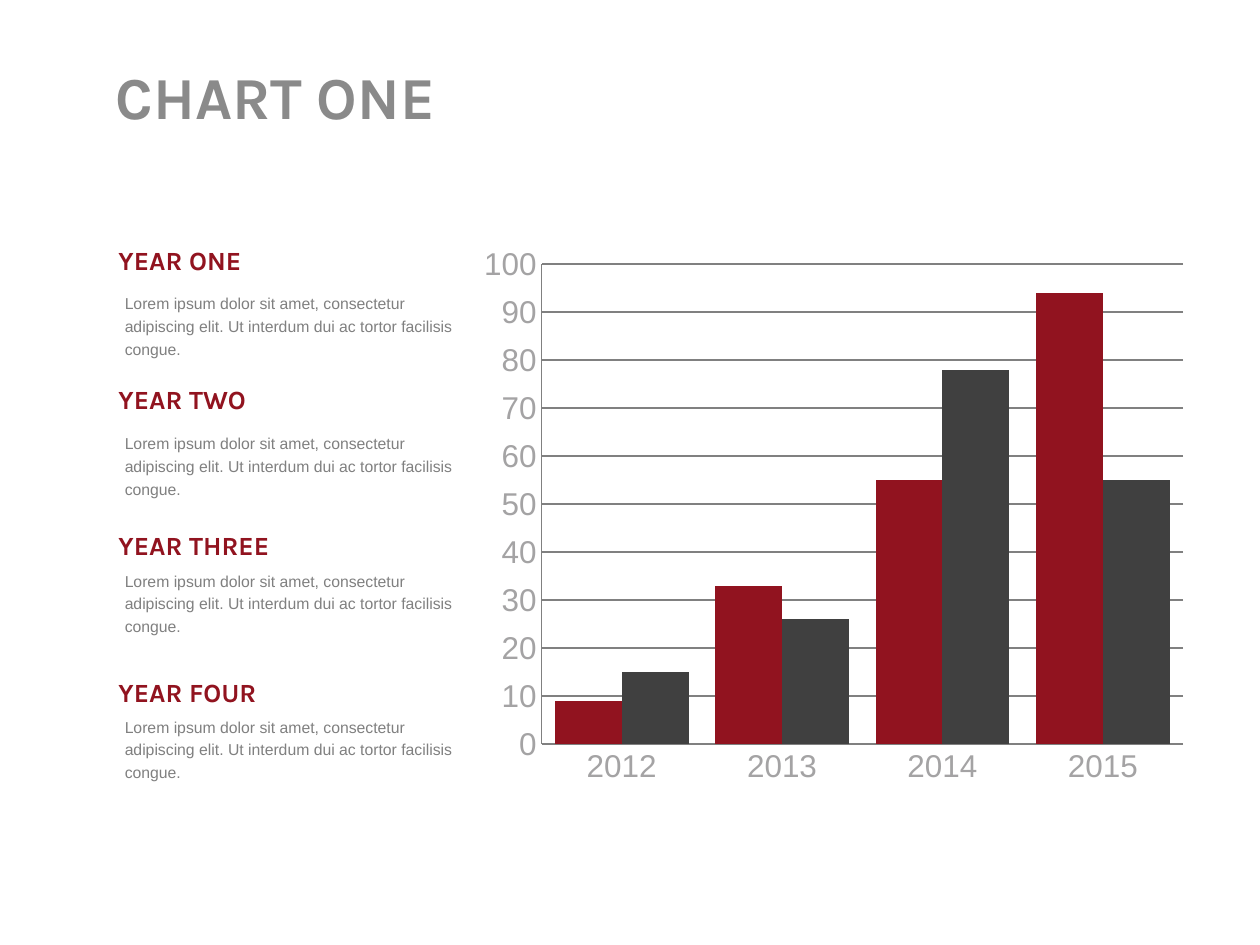
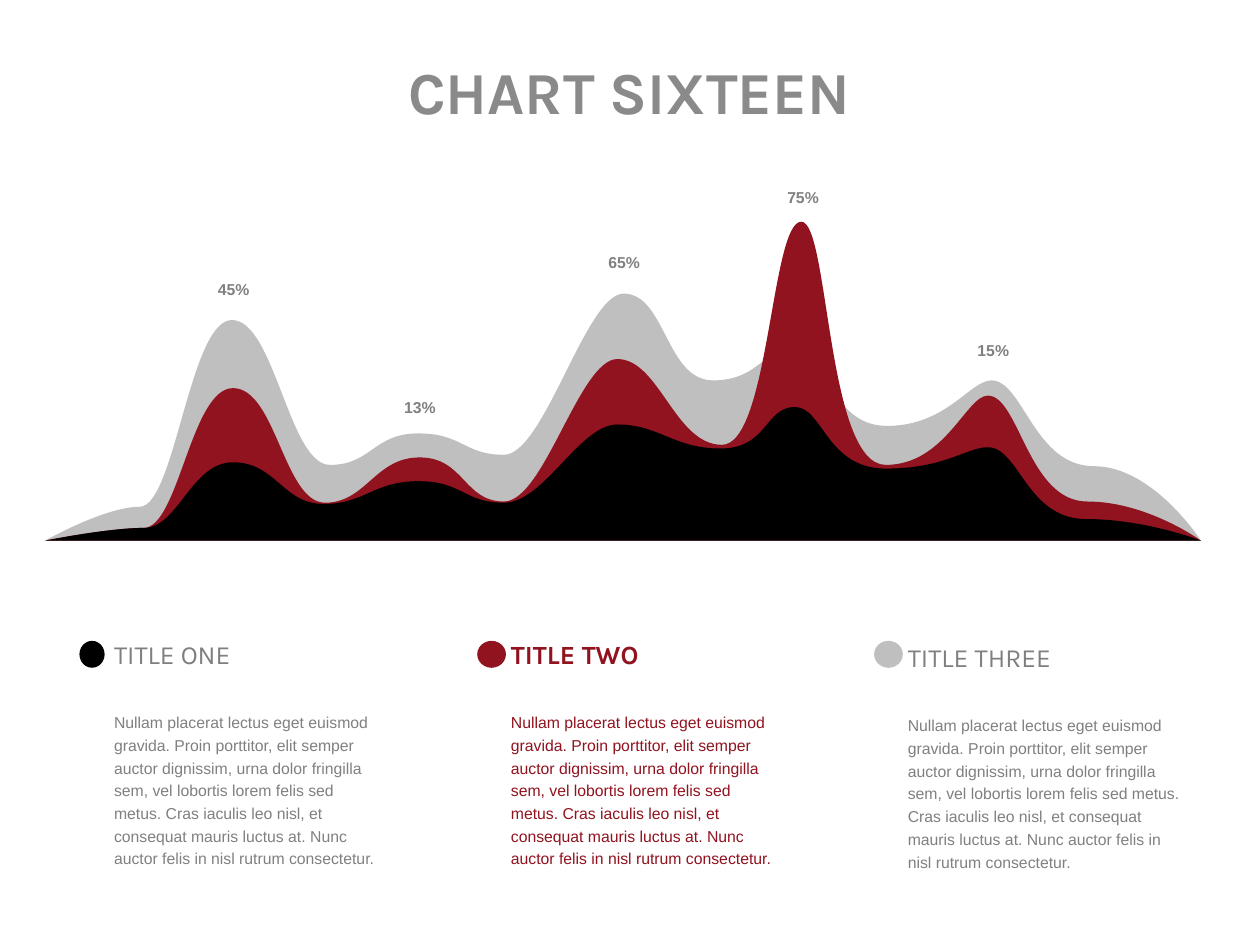
"""Build two chart slides: yearly columns and layered percentage waves."""
from dataclasses import dataclass

from lxml import etree
from pptx import Presentation
from pptx.chart.data import CategoryChartData
from pptx.dml.color import RGBColor
from pptx.enum import chart as ch, shapes, text
from pptx.util import Pt


@dataclass(frozen=True)
class Theme:
    head: str = "Karla"
    body: str = "Arial"
    red: str = "91131F"
    black: str = "000000"
    dark: str = "404040"
    light: str = "BFBFBF"
    title: str = "8A8A8A"
    grey: str = "808080"
    label: str = "7F7F7F"
    axis: str = "A4A3A4"
    title_size: float = 34
    head_size: float = 15
    body_size: float = 9
    axis_size: float = 18


T = Theme()
CENTER = text.PP_ALIGN.CENTER
MIDDLE = text.MSO_ANCHOR.MIDDLE

LOREM = ("Lorem ipsum dolor sit amet, consectetur adipiscing elit. "
         "Ut interdum dui ac tortor facilisis congue.")
NULLAM = ("Nullam placerat lectus eget euismod gravida. Proin porttitor, elit semper "
          "auctor dignissim, urna dolor fringilla sem, vel lobortis lorem felis sed metus. "
          "Cras iaculis leo nisl, et consequat mauris luctus at. Nunc auctor felis in nisl "
          "rutrum consectetur.")

YEARS = [("YEAR ONE", 136.1, 163), ("YEAR TWO", 216, 242.9),
         ("YEAR THREE", 299.2, 321.4), ("YEAR FOUR", 383, 404.9)]

COLUMNS = [("Series 1", (9, 33, 55, 94), T.red), ("Series 2", (15, 26, 78, 55), T.dark)]

REACH = [(0, 0), (20, 20), (24, 24.5), (23.5, 23.5), (25.5, 25.5), (23, 23), (21.6, 24),
         (27, 27), (17.3, 16), (34, 34), (12.2, 18), (34, 34), (0, 0)]
START, END = (25.9, 308.9), (686.2, 308.9)
UNITS = 10
WAVES = [
    (T.light, [(79.9, 289.6), (132.5, 182.9), (188.6, 265.7), (239, 247.7), (288, 259.9),
               (356.4, 167.8), (407.5, 217.4), (455, 197.3), (506.9, 243.4),
               (566.6, 217.4), (625, 266.4)]),
    (T.red, [(82.1, 301.7), (133.2, 221.8), (185.8, 287.3), (239.8, 261.4), (288, 286.6),
             (352.8, 205.2), (412.6, 254.2), (457.9, 126.7), (506.2, 265.7),
             (564.5, 226.1), (621.4, 286.6)]),
    (T.black, [(82.1, 301.7), (133.2, 264.2), (185, 288), (239, 275), (288, 287.3),
               (352.8, 242.6), (411.8, 256.3), (454.3, 232.6), (506.2, 267.8),
               (564.5, 255.6), (620.6, 296.6)]),
]
PEAKS = [("45% ", 117.4, 157), ("13% ", 223.9, 224.6), ("65% ", 340.6, 141.5),
         ("75% ", 442.8, 104.4), ("15% ", 551.5, 191.9)]

LEGEND = [("TITLE ONE", T.black, T.label, T.grey, False, 14.4, 151.2, 0),
          ("TITLE TWO", T.red, T.red, T.red, True, 16.4, 151.2, 0),
          ("TITLE THREE", T.light, T.label, T.grey, False, 16.4, 156.2, 1.8)]
LEGEND_LEFT, LEGEND_PITCH = 65.2, 226.8


def set_all(obj, values):
    """Set every attribute in values on obj."""
    for name, value in values.items():
        setattr(obj, name, value)


def set_font(font, face, size, color, bold=False):
    """Apply face, size, colour and weight to a font."""
    set_all(font, {"name": face, "size": Pt(size), "bold": bold})
    font.color.rgb = RGBColor.from_string(color)


def paint(sp, color):
    """Give a shape a flat fill without line or shadow."""
    sp.shadow.inherit = False
    sp.fill.solid()
    sp.fill.fore_color.rgb = RGBColor.from_string(color)
    sp.line.fill.background()


def add_text(s, words, box, font, inset=0, anchor=text.MSO_ANCHOR.TOP, **para):
    """Add a wrapped text box holding one paragraph."""
    tf = s.shapes.add_textbox(*map(Pt, box)).text_frame
    margins = ("margin_left", "margin_top", "margin_right", "margin_bottom")
    set_all(tf, {"word_wrap": True, "vertical_anchor": anchor,
                 **dict.fromkeys(margins, Pt(inset))})
    p = tf.paragraphs[0]
    set_all(p, para)
    r = p.add_run()
    r.text = words
    set_font(r.font, *font)


def add_title(s, words, left, top, **para):
    """Add the slide title."""
    add_text(s, words, (left, top, 418.3, 48.2), (T.head, T.title_size, T.title, True),
             1.4, space_before=Pt(5), **para)


def add_heading(s, words, left, top, width, color, bold):
    """Add a small heading."""
    add_text(s, words, (left, top, width, 24.5), (T.head, T.head_size, color, bold),
             anchor=MIDDLE)


def add_year(s, words, head_top, body_top):
    """Add a year heading with its description."""
    add_heading(s, words, 67.7, head_top, 116.6, T.red, True)
    add_text(s, LOREM, (68.4, body_top, 200.9, 32.4), (T.body, T.body_size, T.grey), 2.9,
             line_spacing=1.2, space_before=Pt(3.8))


def place_plot(chart, **box):
    """Fix the inner plot area as fractions of the chart."""
    area = chart._chartSpace.chart.plotArea
    for old in area.findall("{*}layout"):
        area.remove(old)
    ns = "{%s}" % etree.QName(area).namespace
    layout = etree.Element(ns + "layout")
    manual = etree.SubElement(layout, ns + "manualLayout")
    values = {"layoutTarget": "inner", "xMode": "edge", "yMode": "edge", **box}
    for name, value in values.items():
        etree.SubElement(manual, ns + name).set("val", str(value))
    area.insert(0, layout)


def add_columns(s):
    """Add the clustered column chart."""
    data = CategoryChartData()
    data.categories = ["2012", "2013", "2014", "2015"]
    for name, values, _ in COLUMNS:
        data.add_series(name, values)
    chart = s.shapes.add_chart(ch.XL_CHART_TYPE.COLUMN_CLUSTERED, Pt(264.2), Pt(135.1),
                               Pt(412.2), Pt(315.4), data).chart
    set_all(chart, {"has_legend": False, "has_title": False})
    plot = chart.plots[0]
    set_all(plot, {"gap_width": 40, "overlap": 0, "vary_by_categories": False})
    for series, (_, _, color) in zip(plot.series, COLUMNS):
        series.format.fill.solid()
        series.format.fill.fore_color.rgb = RGBColor.from_string(color)
    values = chart.value_axis
    set_all(values, {"minimum_scale": 0, "maximum_scale": 100, "major_unit": 10,
                     "has_major_gridlines": True})
    lines = [values.major_gridlines.format.line]
    for axis in (values, chart.category_axis):
        axis.major_tick_mark = axis.minor_tick_mark = ch.XL_TICK_MARK.NONE
        set_font(axis.tick_labels.font, T.body, T.axis_size, T.axis)
        lines.append(axis.format.line)
    for line in lines:
        line.width = Pt(0.75)
        line.color.rgb = RGBColor.from_string(T.grey)
    place_plot(chart, x=0.11, y=0.05, w=0.89, h=0.87)


def bend(sp):
    """Turn the segments between knots into curves with level handles."""
    outline = next(sp._element.iter("{*}path"))
    ns = "{%s}" % etree.QName(outline).namespace
    points = [(int(pt.get("x")), int(pt.get("y"))) for pt in outline.iter(ns + "pt")]
    for i, segment in enumerate(outline.findall(ns + "lnTo")[:len(REACH) - 1]):
        (x0, y0), (x3, y3) = points[i:i + 2]
        handles = [(x0 + round(REACH[i][1] * UNITS), y0),
                   (x3 - round(REACH[i + 1][0] * UNITS), y3), (x3, y3)]
        cubic = etree.Element(ns + "cubicBezTo")
        for x, y in handles:
            etree.SubElement(cubic, ns + "pt", x=str(x), y=str(y))
        outline.replace(segment, cubic)


def add_wave(s, color, knots):
    """Add one smooth layer standing on the baseline."""
    points = [(x * UNITS, y * UNITS) for x, y in (START, *knots, END)]
    outline = s.shapes.build_freeform(*points[0], scale=Pt(1) / UNITS)
    outline.add_line_segments(points[1:], close=True)
    sp = outline.convert_to_shape()
    bend(sp)
    paint(sp, color)


def add_legend(s, column, words, dot, head, body, bold, dot_width, body_width, drop):
    """Add a dot, a heading and a text in one legend column."""
    left = LEGEND_LEFT + column * LEGEND_PITCH
    dot_left = left - (19.8 if column == 0 else 19.3)
    sp = s.shapes.add_shape(shapes.MSO_SHAPE.OVAL, Pt(dot_left), Pt(366.2),
                            Pt(dot_width), Pt(15.4))
    paint(sp, dot)
    add_heading(s, words, left, 361.4 + drop, 144, head, bold)
    add_text(s, NULLAM, (left, 394.8 + drop, body_width, 111.6),
             (T.body, T.body_size, body), anchor=MIDDLE, line_spacing=1.2)


def main():
    """Build both slides and save them."""
    prs = Presentation()
    set_all(prs, {"slide_width": Pt(720), "slide_height": Pt(540)})
    blank = prs.slide_layouts[6]

    s = prs.slides.add_slide(blank)
    add_title(s, "CHART ONE", 64.6, 33.1)
    for year in YEARS:
        add_year(s, *year)
    add_columns(s)

    s = prs.slides.add_slide(blank)
    for wave in WAVES:
        add_wave(s, *wave)
    for words, left, top in PEAKS:
        add_text(s, words, (left, top, 34.6, 18.4), (T.body, T.body_size, T.grey, True),
                 2.9, alignment=CENTER, space_before=Pt(5.5))
    for column, entry in enumerate(LEGEND):
        add_legend(s, column, *entry)
    add_title(s, "CHART SIXTEEN", 150.5, 30.2, alignment=CENTER)

    prs.save("out.pptx")


if __name__ == "__main__":
    main()
